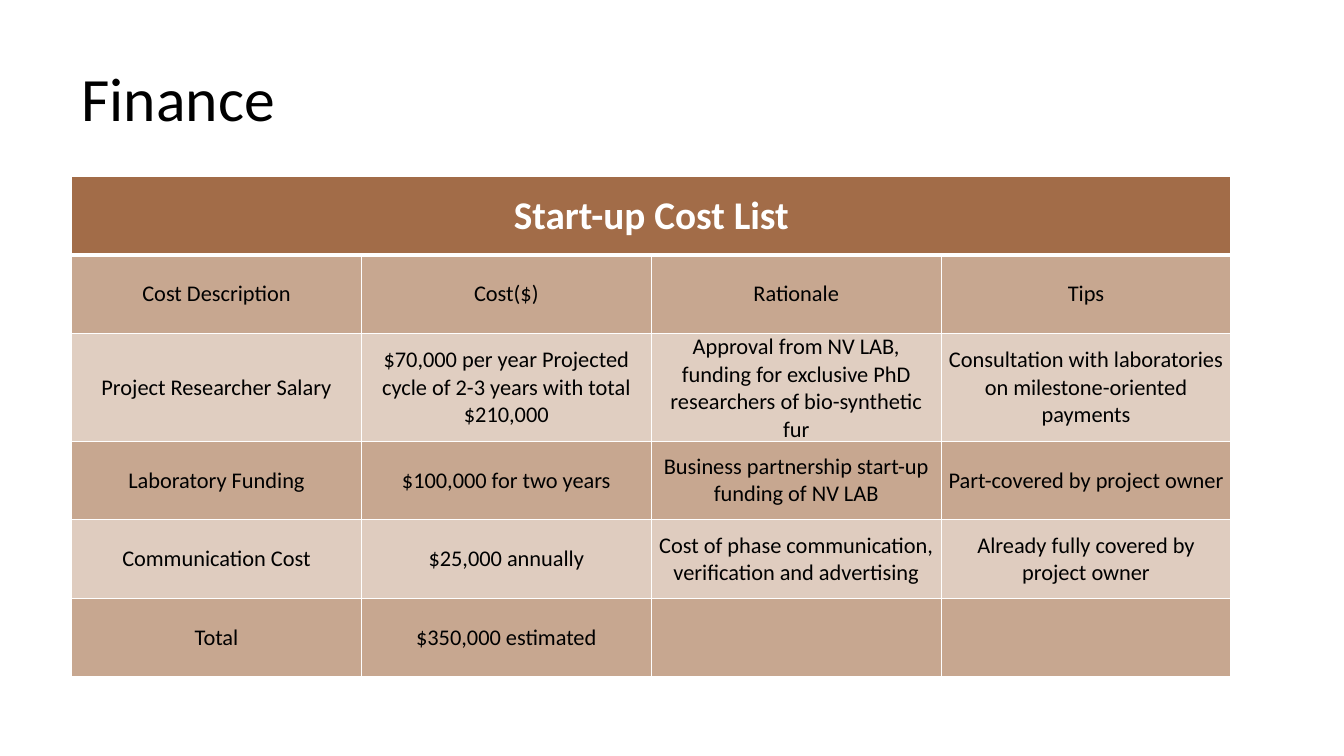
"""Builds the Finance slide with its start-up cost table."""
from lxml import etree
from pptx import Presentation
from pptx.dml.color import RGBColor
from pptx.enum.text import MSO_ANCHOR, PP_ALIGN
from pptx.oxml.ns import qn
from pptx.util import Inches, Pt

MIDDLE = MSO_ANCHOR.MIDDLE
CENTER = PP_ALIGN.CENTER
FONT = "Calibri"
BROWN, WHITE, BLACK = "843C0B", "FFFFFF", "000000"
LEFT, WIDTH, TABLE_TOP = 0.71, 11.5, 1.75
ROW_H, TALL_ROW_H = 0.78, 0.94
OPACITY = [75, 45, 25, 45, 26, 45]
ROWS = [
    ["Start-up Cost List", "", "", ""],
    ["Cost Description", "Cost($)", "Rationale", "Tips"],
    ["Project Researcher Salary",
     "$70,000 per year Projected cycle of 2-3 years with total $210,000",
     "Approval from NV LAB, funding for exclusive PhD researchers of bio-synthetic fur",
     "Consultation with laboratories on milestone-oriented payments"],
    ["Laboratory Funding", "$100,000 for two years",
     "Business partnership start-up funding of NV LAB", "Part-covered by project owner"],
    ["Communication Cost", "$25,000 annually",
     "Cost of phase communication, verification and advertising",
     "Already fully covered by project owner"],
    ["Total", "$350,000 estimated", "", ""],
]


def set_text(tf, text, size, color, bold=False, spacing=1.0):
    """Writes one paragraph and sets its font."""
    p = tf.paragraphs[0]
    p.text = text
    p.line_spacing = spacing
    p.font.name, p.font.size, p.font.bold = FONT, Pt(size), bold
    p.font.color.rgb = RGBColor.from_string(color)
    return p


def style_cell(cell, opacity, top, bottom):
    """Gives a cell its translucent fill and white borders."""
    cell.fill.solid()
    cell.fill.fore_color.rgb = RGBColor.from_string(BROWN)
    tcPr = cell._tc.get_or_add_tcPr()
    rgb = tcPr.find(".//" + qn("a:srgbClr"))
    etree.SubElement(rgb, qn("a:alpha"), val=str(opacity * 1000))
    for i, (side, width) in enumerate([("L", 1), ("R", 1), ("T", top), ("B", bottom)]):
        ln = etree.Element(qn("a:ln" + side), w=str(Pt(width)))
        fill = etree.SubElement(ln, qn("a:solidFill"))
        etree.SubElement(fill, qn("a:srgbClr"), val=WHITE)
        tcPr.insert(i, ln)


prs = Presentation()
prs.slide_width, prs.slide_height = Inches(13.33), Inches(7.5)
s = prs.slides.add_slide(prs.slide_layouts[6])

title = s.shapes.add_textbox(Inches(LEFT), Inches(0.28), Inches(WIDTH), Inches(1.45))
tf = title.text_frame
tf.word_wrap = True
tf.vertical_anchor = MIDDLE
set_text(tf, "Finance", 44, BLACK, spacing=0.9)

heights = [TALL_ROW_H if r == 2 else ROW_H for r in range(len(ROWS))]
table = s.shapes.add_table(len(ROWS), len(ROWS[0]), Inches(LEFT), Inches(TABLE_TOP),
                           Inches(WIDTH), Inches(sum(heights))).table
table.first_row = table.horz_banding = False
for r, texts in enumerate(ROWS):
    table.rows[r].height = Inches(heights[r])
    header = r == 0
    for c, text in enumerate(texts):
        cell = table.cell(r, c)
        cell.vertical_anchor = MIDDLE
        cell.margin_left = cell.margin_right = Inches(0.07)
        cell.margin_top = cell.margin_bottom = 0
        p = set_text(cell.text_frame, text, 28 if header else 16,
                     WHITE if header else BLACK, header, 0.9 if r == 1 else 1.0)
        p.alignment = CENTER
        style_cell(cell, OPACITY[r], 3 if r == 1 else 1, 3 if header else 1)
table.cell(0, 0).merge(table.cell(0, len(ROWS[0]) - 1))

prs.save("out.pptx")
